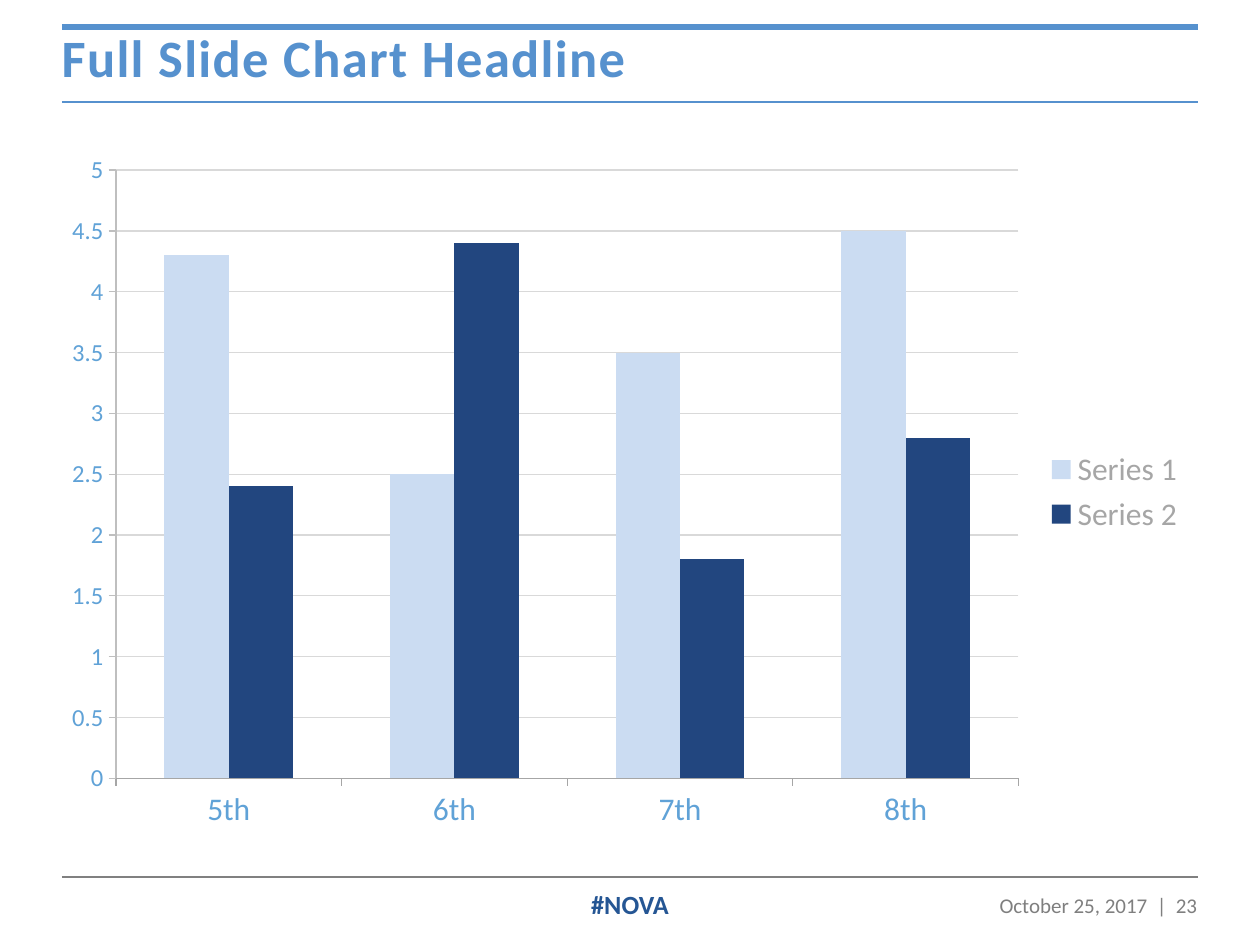
from dataclasses import dataclass

import pptx
import pptx.chart.data
import pptx.dml.color
import pptx.enum.chart
import pptx.enum.shapes
import pptx.enum.text
import pptx.oxml
import pptx.oxml.ns
import pptx.util

ALIGN = pptx.enum.text.PP_ALIGN
ANCHOR = pptx.enum.text.MSO_ANCHOR
PX = 914400 / 126


def px(length):
    return pptx.util.Emu(round(length * PX))


def rgb(value):
    return pptx.dml.color.RGBColor.from_string(value)


@dataclass(frozen=True)
class Theme:
    font: str = "Calibri"
    headline: str = "5691CE"
    hashtag: str = "255694"
    muted: str = "7F7F7F"
    footer_rule: str = "808080"
    axis_text: str = "60A2D7"
    category_line: str = "A6A6A6"
    value_line: str = "BFBFBF"
    grid: str = "D9D9D9"
    legend: str = "A6A6A6"
    series: tuple = ("CBDCF2", "22467F")
    headline_size: int = 30
    chart_size: int = 18
    value_size: int = 14
    hashtag_size: int = 15
    date_size: int = 12
    chart_line: float = 0.75


class SlideBuilder:
    def __init__(self, slide, theme):
        self.slide = slide
        self.theme = theme

    def style_font(self, font, size, color, bold=False):
        font.name = self.theme.font
        font.size = pptx.util.Pt(size)
        font.bold = bold
        font.color.rgb = rgb(color)

    def style_line(self, line, color, width):
        line.color.rgb = rgb(color)
        line.width = pptx.util.Pt(width)

    def fill_text(self, shape, text, size, color, align, bold=False):
        frame = shape.text_frame
        frame.word_wrap = True
        frame.auto_size = pptx.enum.text.MSO_AUTO_SIZE.NONE
        frame.vertical_anchor = ANCHOR.MIDDLE
        paragraph = frame.paragraphs[0]
        paragraph.alignment = align
        run = paragraph.add_run()
        run.text = text
        self.style_font(run.font, size, color, bold)
        return paragraph, run

    def title(self, text, left, top, width, height):
        headline = self.slide.shapes.title
        headline.left, headline.top = px(left), px(top)
        headline.width, headline.height = px(width), px(height)
        paragraph, run = self.fill_text(headline, text, self.theme.headline_size,
                                        self.theme.headline, ALIGN.LEFT, bold=True)
        paragraph.line_spacing = 0.9
        run.font._element.set("spc", "80")

    def text(self, text, left, top, width, height, size, color, align, bold=False):
        box = self.slide.shapes.add_textbox(px(left), px(top), px(width), px(height))
        self.fill_text(box, text, size, color, align, bold)

    def rule(self, left, right, y, color, width):
        line = self.slide.shapes.add_connector(
            pptx.enum.shapes.MSO_CONNECTOR.STRAIGHT, px(left), px(y), px(right), px(y))
        self.style_line(line.line, color, width)
        line._element.spPr.append(pptx.oxml.parse_xml(
            "<a:effectLst %s/>" % pptx.oxml.ns.nsdecls("a")))

    def style_axis(self, axis, size, line_color):
        axis.major_tick_mark = pptx.enum.chart.XL_TICK_MARK.OUTSIDE
        axis.minor_tick_mark = pptx.enum.chart.XL_TICK_MARK.NONE
        self.style_font(axis.tick_labels.font, size, self.theme.axis_text)
        self.style_line(axis.format.line, line_color, self.theme.chart_line)

    def column_chart(self, categories, series, left, top, width, height):
        theme = self.theme
        data = pptx.chart.data.CategoryChartData()
        data.categories = categories
        for name, values in series.items():
            data.add_series(name, values)
        chart = self.slide.shapes.add_chart(
            pptx.enum.chart.XL_CHART_TYPE.COLUMN_CLUSTERED,
            px(left), px(top), px(width), px(height), data).chart
        chart.has_title = False
        self.style_font(chart.font, theme.chart_size, theme.muted)

        # Columns
        plot = chart.plots[0]
        plot.vary_by_categories = False
        plot.gap_width = 150
        plot.overlap = 0
        for columns, color in zip(plot.series, theme.series):
            columns.format.fill.solid()
            columns.format.fill.fore_color.rgb = rgb(color)
            columns.invert_if_negative = False

        # Axes and gridlines
        self.style_axis(chart.category_axis, theme.chart_size, theme.category_line)
        scale = chart.value_axis
        self.style_axis(scale, theme.value_size, theme.value_line)
        scale.minimum_scale, scale.maximum_scale, scale.major_unit = 0, 5, 0.5
        scale.has_major_gridlines = True
        self.style_line(scale.major_gridlines.format.line, theme.grid, theme.chart_line)

        # Legend
        chart.has_legend = True
        chart.legend.position = pptx.enum.chart.XL_LEGEND_POSITION.RIGHT
        chart.legend.include_in_layout = False
        self.style_font(chart.legend.font, theme.chart_size, theme.legend)


def main():
    deck = pptx.Presentation()
    deck.slide_width, deck.slide_height = px(1260), px(945)
    theme = Theme()
    page = SlideBuilder(deck.slides.add_slide(deck.slide_layouts[5]), theme)
    left, right = 62, 1198

    # Headline between two rules
    page.rule(left, right, 27, theme.headline, 3.5)
    page.rule(left, right, 102, theme.headline, 1)
    page.title("Full Slide Chart Headline", 49, 27, 1149, 67)

    # Chart
    page.column_chart(
        ["5th", "6th", "7th", "8th"],
        {"Series 1": (4.3, 2.5, 3.5, 4.5), "Series 2": (2.4, 4.4, 1.8, 2.8)},
        49, 141, 1149, 702)

    # Footer
    page.rule(left, right, 877, theme.footer_rule, 1)
    page.text("#NOVA", 483, 879, 294, 50, theme.hashtag_size, theme.hashtag,
              ALIGN.CENTER, bold=True)
    page.text("October 25, 2017  |  23", 971, 881, 239, 48, theme.date_size,
              theme.muted, ALIGN.RIGHT)

    deck.save("out.pptx")


if __name__ == "__main__":
    main()
